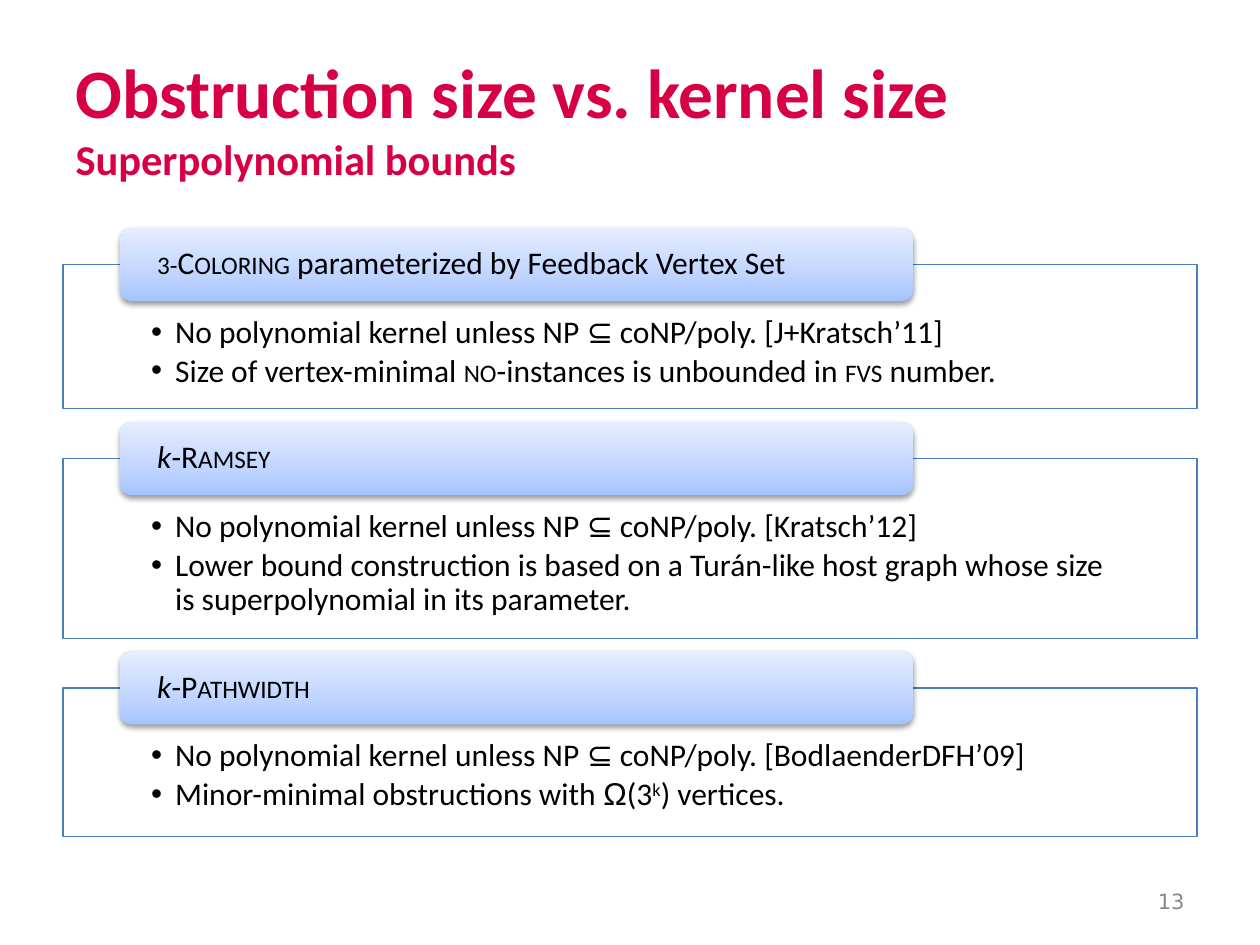
from lxml import etree
from pptx import Presentation
from pptx.dml.color import RGBColor
from pptx.enum.shapes import MSO_SHAPE
from pptx.enum.text import MSO_ANCHOR, MSO_AUTO_SIZE, PP_ALIGN
from pptx.oxml import parse_xml
from pptx.oxml.ns import nsdecls, qn
from pptx.util import Inches, Pt

RECTANGLE, ROUNDED = MSO_SHAPE.RECTANGLE, MSO_SHAPE.ROUNDED_RECTANGLE
TOP, MIDDLE = MSO_ANCHOR.TOP, MSO_ANCHOR.MIDDLE
LEFT, RIGHT = PP_ALIGN.LEFT, PP_ALIGN.RIGHT
NO_AUTOFIT = MSO_AUTO_SIZE.NONE

GRADIENT = f"""<a:gradFill {nsdecls('a')} rotWithShape="1"><a:gsLst>
<a:gs pos="0"><a:srgbClr val="A4C4FF"/></a:gs>
<a:gs pos="35000"><a:srgbClr val="BFD4FF"/></a:gs>
<a:gs pos="100000"><a:srgbClr val="E6EEFF"/></a:gs>
</a:gsLst><a:lin ang="16200000" scaled="0"/></a:gradFill>"""
SHADOW = f"""<a:outerShdw {nsdecls('a')} blurRad="39400" dist="20300" dir="5400000"
rotWithShape="0"><a:srgbClr val="000000"><a:alpha val="38000"/></a:srgbClr></a:outerShdw>"""

# Runs are (text, style); styles: "" plain, "small" caps, "italic", "super", "symbol"
# Each section: box top, box height, heading runs, list of bullet runs
SECTIONS = [
    (2.1, 1.14,
     [("3-Coloring", "small"), (" parameterized by Feedback Vertex Set", "")],
     [[("No polynomial kernel unless NP ⊆ coNP/poly. [J+Kratsch’11]", "")],
      [("Size of vertex-minimal ", ""), ("no", "small"),
       ("-instances is unbounded in ", ""), ("fvs", "small"), (" number.", "")]]),
    (3.64, 1.43,
     [("k", "italic"), ("-", ""), ("Ramsey", "small")],
     [[("No polynomial kernel unless NP ⊆ coNP/poly. [Kratsch’12]", "")],
      [("Lower bound construction is based on a Turán-like host graph "
        "whose size is superpolynomial in its parameter.", "")]]),
    (5.46, 1.18,
     [("k", "italic"), ("-", ""), ("Pathwidth", "small")],
     [[("No polynomial kernel unless NP ⊆ coNP/poly. [BodlaenderDFH’09]", "")],
      [("Minor-minimal obstructions with ", ""), ("Ω", "symbol"), ("(3", ""),
       ("k", "super"), (") vertices.", "")]]),
]


def color(value):
    return RGBColor.from_string(value)


def add_run(paragraph, text, size, hex_color, style="", font_name="Calibri"):
    run = paragraph.add_run()
    run.text = text
    font = run.font
    font.name = "Arial" if style == "symbol" else font_name
    font.size = Pt(size)
    font.color.rgb = color(hex_color)
    if style == "italic":
        font.italic = True
    elif style == "small":
        font._element.set("cap", "small")
    elif style == "super":
        font._element.set("baseline", "30000")
    return run


presentation = Presentation()
presentation.slide_width = Inches(10)
presentation.slide_height = Inches(7.5)
slide = presentation.slides.add_slide(presentation.slide_layouts[5])

# Title with a smaller second line
title = slide.shapes.title
title.left, title.top = Inches(0.5), Inches(0.3)
title.width, title.height = Inches(9), Inches(1.25)
title.text_frame.auto_size = NO_AUTOFIT
title.text_frame.vertical_anchor = MIDDLE
paragraph = title.text_frame.paragraphs[0]
paragraph.alignment = LEFT
add_run(paragraph, "Obstruction size vs. kernel size", 39.6, "D70044").font.bold = True
paragraph.add_line_break()
add_run(paragraph, "Superpolynomial bounds", 24.3, "D70044").font.bold = True

# Sections: outlined box with bullets, heading tab overlapping its top edge
for top, height, heading, bullets in SECTIONS:
    box = slide.shapes.add_shape(
        RECTANGLE, Inches(0.5), Inches(top), Inches(9), Inches(height))
    box.fill.solid()
    box.fill.fore_color.rgb = color("FFFFFF")
    fill_color = box._element.spPr.find(qn("a:solidFill"))[0]
    etree.SubElement(fill_color, qn("a:alpha")).set("val", "90000")
    box.line.color.rgb = color("4B7EBC")
    box.line.width = Pt(0.75)

    tab = slide.shapes.add_shape(
        ROUNDED, Inches(0.95), Inches(top - 0.29), Inches(6.3), Inches(0.58))
    tab.fill.background()
    tab_properties = tab._element.spPr
    tab_properties.replace(tab_properties.find(qn("a:noFill")), parse_xml(GRADIENT))
    tab.line.fill.background()

    for shape, anchor, margins, lines in (
            (box, TOP, (0.7, 0.41, 0.14), bullets),
            (tab, MIDDLE, (0.27, 0.03, 0.03), [heading])):
        shape.shadow.inherit = False
        frame = shape.text_frame
        frame.word_wrap = True
        frame.vertical_anchor = anchor
        side, upper, lower = margins
        frame.margin_left = frame.margin_right = Inches(side)
        frame.margin_top, frame.margin_bottom = Inches(upper), Inches(lower)
        for index, runs in enumerate(lines):
            paragraph = frame.paragraphs[0] if index == 0 else frame.add_paragraph()
            paragraph.alignment = LEFT
            paragraph.line_spacing = 0.9
            if shape is box:
                paragraph.space_after = Pt(2.7)
                properties = paragraph._p.get_or_add_pPr()
                properties.set("marL", str(Inches(0.19)))
                properties.set("indent", str(Inches(-0.19)))
                etree.SubElement(properties, qn("a:buFont")).set("typeface", "Arial")
                etree.SubElement(properties, qn("a:buChar")).set("char", "•")
            for text, style in runs:
                add_run(paragraph, text, 18, "000000", style)

    tab_properties.find(qn("a:effectLst")).append(parse_xml(SHADOW))

# Slide number
number = slide.shapes.add_textbox(Inches(7.17), Inches(6.95), Inches(2.33), Inches(0.4))
number.text_frame.word_wrap = True
number.text_frame.vertical_anchor = MIDDLE
paragraph = number.text_frame.paragraphs[0]
paragraph.alignment = RIGHT
add_run(paragraph, "13", 12, "898989", font_name="DejaVu Sans")

presentation.save("out.pptx")
